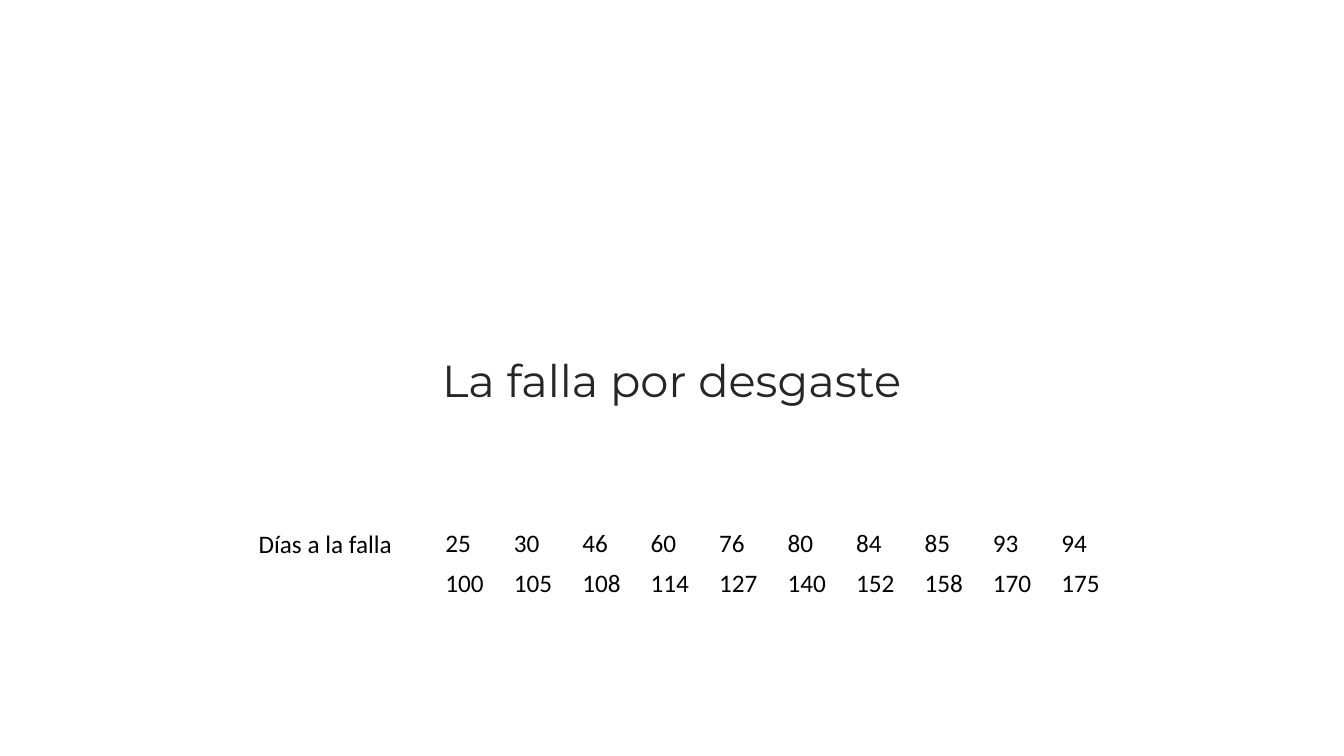
from pptx import Presentation
from pptx.dml.color import RGBColor
from pptx.enum.text import MSO_ANCHOR, PP_ALIGN
from pptx.util import Cm, Pt

BLACK = RGBColor(0x00, 0x00, 0x00)
DARK_GRAY = RGBColor(0x26, 0x26, 0x26)

DAYS_TO_FAILURE = [
    [25, 30, 46, 60, 76, 80, 84, 85, 93, 94],
    [100, 105, 108, 114, 127, 140, 152, 158, 170, 175],
]


def style_paragraph(p, size, name, color):
    p.font.size = Pt(size)
    p.font.name = name
    p.font.color.rgb = color


def add_title(slide, text, left, top, width, height):
    title = slide.shapes.title
    title.left, title.top, title.width, title.height = left, top, width, height
    tf = title.text_frame
    tf.text = text
    tf.word_wrap = True
    tf.vertical_anchor = MSO_ANCHOR.BOTTOM
    p = tf.paragraphs[0]
    p.alignment = PP_ALIGN.CENTER
    p.line_spacing = 0.9
    style_paragraph(p, 32, "Montserrat", DARK_GRAY)


def add_label(slide, text, left, top, width, height):
    tf = slide.shapes.add_textbox(left, top, width, height).text_frame
    tf.text = text
    tf.word_wrap = True
    style_paragraph(tf.paragraphs[0], 18, "Calibri", BLACK)


def add_number_table(slide, rows, left, top, width, height):
    """Place the numbers in a plain table without fills or header."""
    table = slide.shapes.add_table(
        len(rows), len(rows[0]), left, top, width, height).table
    table.first_row = False
    table.horz_banding = False
    for r, row in enumerate(rows):
        for c, value in enumerate(row):
            cell = table.cell(r, c)
            cell.fill.background()
            cell.text = str(value)
            style_paragraph(cell.text_frame.paragraphs[0], 18, "Calibri", BLACK)


def add_failure_data(slide, left, top, width, height):
    """Place the label on the first row, with the table to its right."""
    table_offset = Cm(4.7)
    add_label(slide, "Días a la falla", left, top, Cm(3.91), height // 2)
    add_number_table(slide, DAYS_TO_FAILURE, left + table_offset, top,
                     width - table_offset, height)


def main():
    prs = Presentation()
    prs.slide_width, prs.slide_height = Cm(33.87), Cm(19.05)
    slide = prs.slides.add_slide(prs.slide_layouts[0])
    subtitle = slide.placeholders[1].element
    subtitle.getparent().remove(subtitle)
    add_title(slide, "La falla por desgaste",
              Cm(4.23), Cm(5.08), Cm(25.4), Cm(5.31))
    add_failure_data(slide, Cm(6.27), Cm(13.18), Cm(21.95), Cm(2.04))
    prs.save("out.pptx")


if __name__ == "__main__":
    main()
